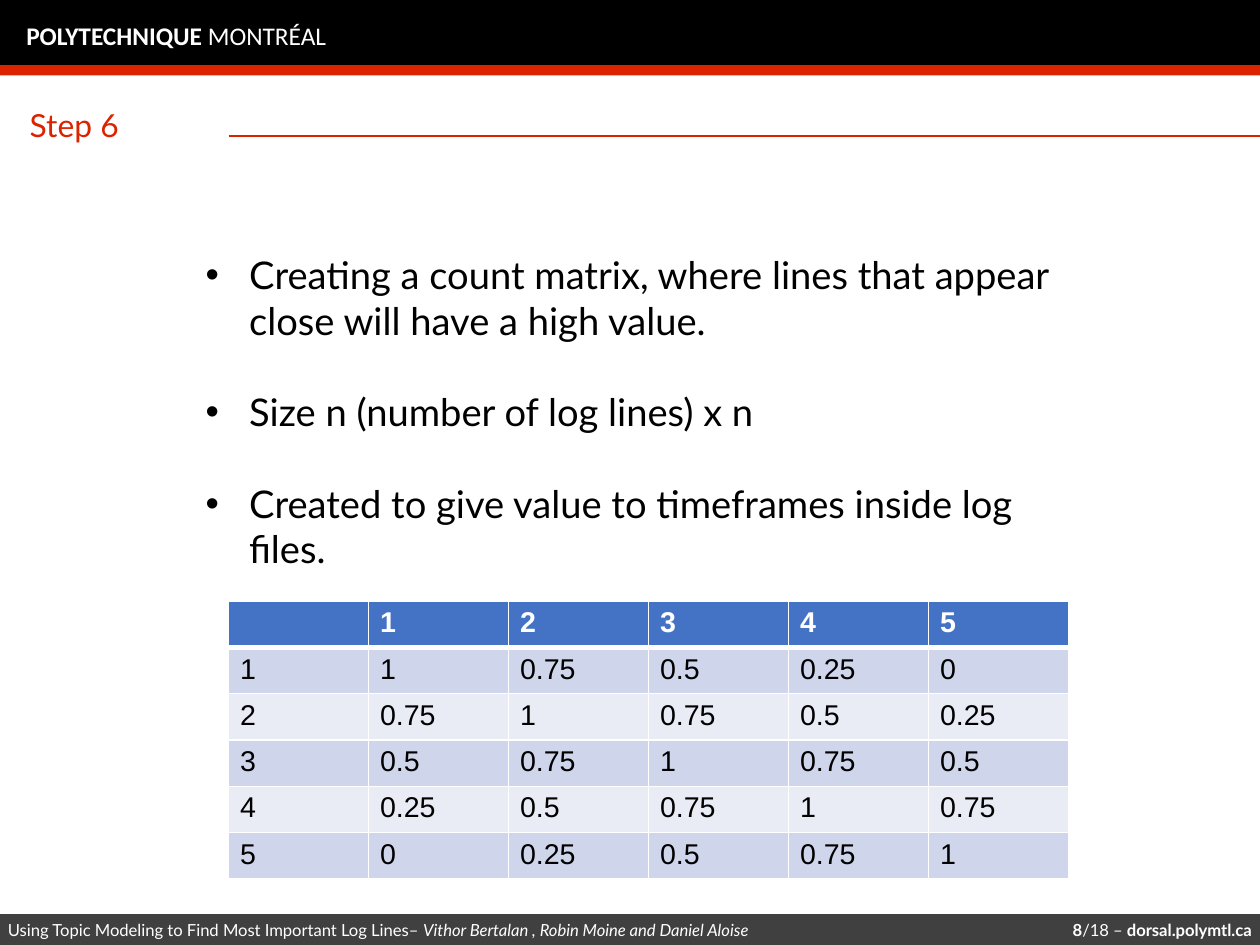
from lxml.etree import SubElement
from pptx import Presentation
from pptx.dml.color import RGBColor
from pptx.enum.shapes import MSO_CONNECTOR, MSO_SHAPE
from pptx.enum.text import MSO_ANCHOR, MSO_AUTO_SIZE, PP_ALIGN
from pptx.oxml.ns import qn
from pptx.util import Inches, Pt

COLORS = {
    "red": "DC2300", "black": "000000", "white": "FFFFFF", "footer": "404040",
    "header_row": "4472C4", "odd_row": "CFD5EA", "even_row": "E9EBF5",
}
CM_PER_INCH = 2.54
WIDTH, HEIGHT = 28 / CM_PER_INCH, 21 / CM_PER_INCH
BULLETS = [
    "Creating a count matrix, where lines that appear close will have a high value.",
    "Size n (number of log lines) x n",
    "Created to give value to timeframes inside log files.",
]
MATRIX_SIZE = 5


def color(name):
    """Return the named colour."""
    return RGBColor.from_string(COLORS[name])


def add_span(para, text, size=24, font="Lato", fill="black", bold=False, italic=False):
    """Add a formatted run of text to a paragraph."""
    span = para.add_run()
    span.text = text
    span.font.size = Pt(size)
    span.font.name = font
    span.font.color.rgb = color(fill)
    span.font.bold = bold
    span.font.italic = italic


def prepare_frame(shape, side=0, top=0, anchor=MSO_ANCHOR.MIDDLE, wrap=True):
    """Set the margins and anchor of a shape's text and return its first paragraph."""
    frame = shape.text_frame
    frame.auto_size = MSO_AUTO_SIZE.NONE
    frame.word_wrap = wrap
    frame.vertical_anchor = anchor
    frame.margin_left = frame.margin_right = Inches(side)
    frame.margin_top = frame.margin_bottom = Inches(top)
    para = frame.paragraphs[0]
    para.alignment = PP_ALIGN.LEFT
    return para


def move(shape, left, top, width, height):
    """Place a shape in the given box."""
    shape.left, shape.top = Inches(left), Inches(top)
    shape.width, shape.height = Inches(width), Inches(height)


def add_bar(page, left, top, width, height, fill):
    """Add a plain filled bar."""
    bar = page.shapes.add_shape(
        MSO_SHAPE.RECTANGLE, Inches(left), Inches(top), Inches(width), Inches(height))
    bar.shadow.inherit = False
    bar.fill.solid()
    bar.fill.fore_color.rgb = color(fill)
    bar.line.fill.background()
    return bar


def add_header(page, left, top, width, height):
    """Draw the black band with the school name and the red stripe below it."""
    stripe = 0.09
    band = height - stripe
    add_bar(page, left, top, width, band, "black")
    add_bar(page, left, top + band, width, stripe, "red")
    box = page.shapes.add_textbox(
        Inches(left + 0.23), Inches(top + 0.03), Inches(2.79), Inches(0.43))
    para = prepare_frame(box)
    para.line_spacing = 1.5
    style = {"size": 16, "font": "Calibri", "fill": "white"}
    add_span(para, "POLYTECHNIQUE", bold=True, **style)
    add_span(para, " MONTRÉAL", **style)


def add_title(page, left, top, width, height):
    """Fill the title and draw the rule that runs to the right edge."""
    title = page.shapes.title
    move(title, left, top, 2.02, height)
    para = prepare_frame(title)
    para.line_spacing = 1.5
    add_span(para, "Step 6", size=20, fill="red")
    rule_y = Inches(top + 0.47)
    rule = page.shapes.add_connector(
        MSO_CONNECTOR.STRAIGHT, Inches(left + 1.74), rule_y, Inches(left + width), rule_y)
    rule.line.color.rgb = color("red")
    rule.line.width = Pt(1.45)
    SubElement(rule._element.spPr, qn("a:effectLst"))


def add_bullets(page, left, top, width, height):
    """Fill the body with the bulleted list."""
    body = page.placeholders[1]
    move(body, left, top, width, height)
    para = prepare_frame(body, side=0.1, top=0.05, anchor=MSO_ANCHOR.TOP)
    for index, text in enumerate(BULLETS):
        if index:
            para = body.text_frame.add_paragraph()
        para.alignment = PP_ALIGN.LEFT
        para.space_before = Pt(28.8 if index else 0)
        properties = para._p.get_or_add_pPr()
        properties.set("marL", str(Inches(0.75)))
        properties.set("indent", str(Inches(-0.38)))
        SubElement(properties, qn("a:buFont"), typeface="Arial")
        SubElement(properties, qn("a:buChar"), char="•")
        add_span(para, text)


def add_borders(cell, bottom):
    """Give a cell white borders with the given bottom width."""
    properties = cell._tc.get_or_add_tcPr()
    for side, points in (("L", 1), ("R", 1), ("T", 1), ("B", bottom)):
        line = SubElement(properties, qn(f"a:ln{side}"), w=str(Pt(points)))
        solid = SubElement(line, qn("a:solidFill"))
        SubElement(solid, qn("a:srgbClr"), val=COLORS["white"])


def matrix_text(row, column):
    """Return a label or the closeness of two log lines."""
    if row and column:
        return f"{1 - abs(row - column) / 4:g}"
    return str(row or column or "")


def add_matrix(page, left, top, width, height):
    """Add the count matrix as a table."""
    count = MATRIX_SIZE + 1
    table = page.shapes.add_table(
        count, count, Inches(left), Inches(top), Inches(width), Inches(height)).table
    for row in range(count):
        header = row == 0
        fill = "header_row" if header else "odd_row" if row % 2 else "even_row"
        for column in range(count):
            cell = table.cell(row, column)
            add_borders(cell, bottom=3 if header else 1)
            cell.fill.solid()
            cell.fill.fore_color.rgb = color(fill)
            text = matrix_text(row, column)
            if text:
                add_span(cell.text_frame.paragraphs[0], text, size=18, font="Arial",
                         fill="white" if header else "black", bold=header)


def add_footer(page, left, top, width, height):
    """Draw the footer with the talk on the left and the page number on the right."""
    style = {"size": 10.5, "fill": "white"}
    bar = add_bar(page, left, top, width, height, "footer")
    para = prepare_frame(bar, side=0.07, top=0.04, wrap=False)
    add_span(para, "Using Topic Modeling to Find Most Important Log Lines– ", **style)
    add_span(para, "Vithor Bertalan , Robin Moine and Daniel Aloise", italic=True, **style)
    number_width = 3.21
    box = page.shapes.add_textbox(Inches(left + width - number_width), Inches(top),
                                  Inches(number_width), Inches(height))
    para = prepare_frame(box, side=0.07, top=0.04)
    para.alignment = PP_ALIGN.RIGHT
    add_span(para, "8", bold=True, **style)
    add_span(para, "/18 –", **style)
    add_span(para, " dorsal.polymtl.ca", bold=True, **style)


def main():
    """Build the slide and save the deck."""
    deck = Presentation()
    deck.slide_width, deck.slide_height = Inches(WIDTH), Inches(HEIGHT)
    page = deck.slides.add_slide(deck.slide_layouts[1])
    add_header(page, 0, 0, WIDTH, 0.66)
    add_title(page, 0.26, 0.72, WIDTH - 0.26, 0.57)
    add_bullets(page, 1.33, 2.15, 8.35, 4.14)
    add_matrix(page, 2, 5.26, 7.35, 2.43)
    add_footer(page, 0, HEIGHT - 0.27, WIDTH, 0.27)
    deck.save("out.pptx")


if __name__ == "__main__":
    main()
